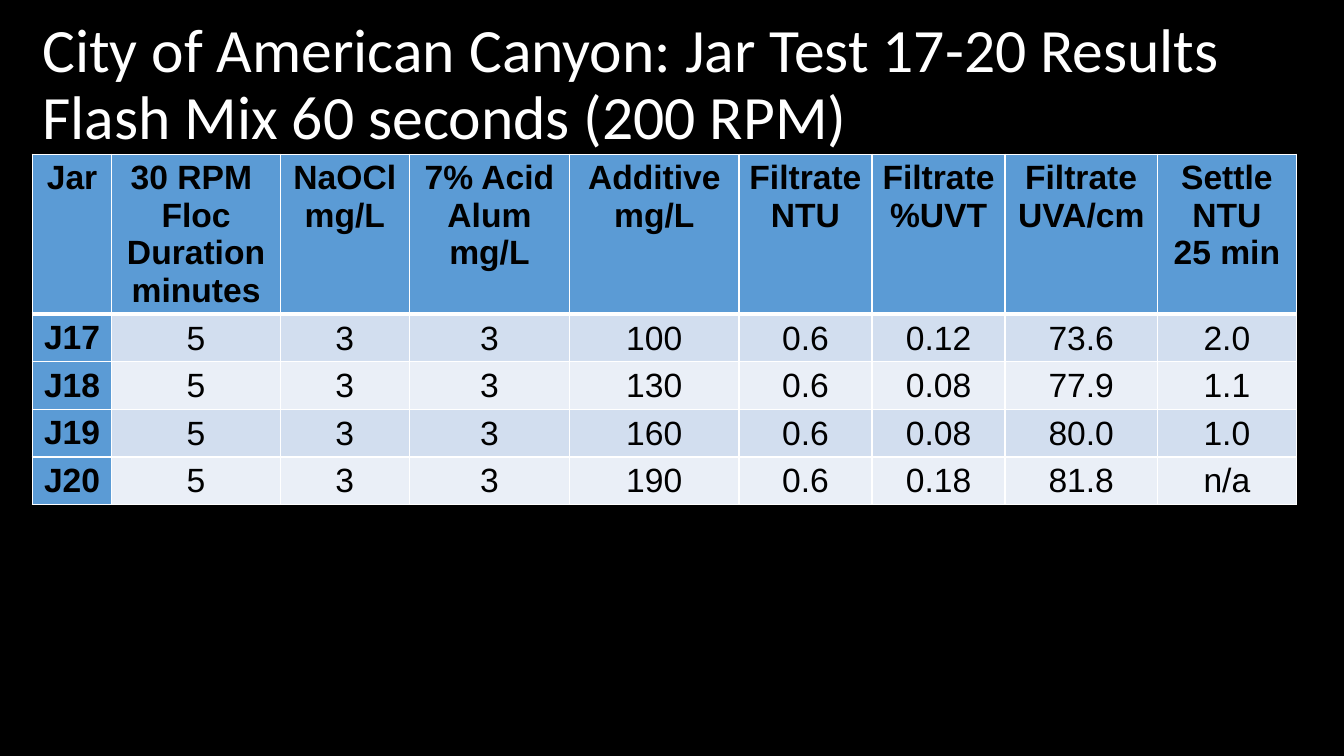
from lxml import etree
from pptx import Presentation
from pptx.dml.color import RGBColor
from pptx.enum.text import MSO_ANCHOR, MSO_AUTO_SIZE, PP_ALIGN
from pptx.oxml.ns import qn
from pptx.util import Inches, Pt

LEFT, CENTER = PP_ALIGN.LEFT, PP_ALIGN.CENTER
TOP, MIDDLE = MSO_ANCHOR.TOP, MSO_ANCHOR.MIDDLE
NO_FIT = MSO_AUTO_SIZE.NONE
COLORS = {"back": "000000", "title": "FFFFFF", "text": "000000", "border": "FFFFFF",
          "head": "5B9BD5", "odd": "D2DEEF", "even": "EAEFF7"}

HEADERS = ["Jar", "30 RPM \nFloc\nDuration\nminutes", "NaOCl\nmg/L", "7% Acid Alum\nmg/L",
           "Additive\nmg/L", "Filtrate\nNTU", "Filtrate\n%UVT", "Filtrate\nUVA/cm",
           "Settle\nNTU\n25 min"]
RESULTS = [
    ["J17", "5", "3", "3", "100", "0.6", "0.12", "73.6", "2.0"],
    ["J18", "5", "3", "3", "130", "0.6", "0.08", "77.9", "1.1"],
    ["J19", "5", "3", "3", "160", "0.6", "0.08", "80.0", "1.0"],
    ["J20", "5", "3", "3", "190", "0.6", "0.18", "81.8", "n/a"],
]
COL_WIDTHS = [0.79, 1.67, 1.28, 1.59, 1.68, 1.32, 1.32, 1.51, 1.38]
ROW_HEIGHT = 0.41
MARGIN = 0.32


def format_runs(p, font, size, color, bold=False):
    for r in p.runs:
        r.font.name, r.font.size, r.font.bold = font, Pt(size), bold
        r.font.color.rgb = RGBColor.from_string(COLORS[color])


def set_borders(cell, bottom_width):
    tcPr = cell._tc.get_or_add_tcPr()
    widths = {"a:lnL": 1, "a:lnR": 1, "a:lnT": 1, "a:lnB": bottom_width}
    for i, (tag, width) in enumerate(widths.items()):
        ln = etree.Element(qn(tag), w=str(Pt(width)))
        fill = etree.SubElement(ln, qn("a:solidFill"))
        etree.SubElement(fill, qn("a:srgbClr"), val=COLORS["border"])
        tcPr.insert(i, ln)


prs = Presentation()
prs.slide_width, prs.slide_height = Inches(13.33), Inches(7.5)
s = prs.slides.add_slide(prs.slide_layouts[5])
s.background.fill.solid()
s.background.fill.fore_color.rgb = RGBColor.from_string(COLORS["back"])

# Title
title = s.shapes.title
title.left, title.top = Inches(MARGIN), Inches(0.13)
title.width, title.height = Inches(12.1), Inches(1.45)
tf = title.text_frame
tf.text = "City of American Canyon: Jar Test 17-20 Results\vFlash Mix 60 seconds (200 RPM)"
tf.word_wrap, tf.auto_size, tf.vertical_anchor = True, NO_FIT, MIDDLE
p = tf.paragraphs[0]
p.alignment, p.line_spacing = LEFT, 0.9
format_runs(p, "Calibri", 44, "title")

# Results table
rows = [HEADERS] + RESULTS
table = s.shapes.add_table(len(rows), len(HEADERS), Inches(MARGIN), Inches(1.53),
                           Inches(sum(COL_WIDTHS)), Inches(ROW_HEIGHT * len(rows))).table
table.first_col = True
for column, width in zip(table.columns, COL_WIDTHS):
    column.width = Inches(width)

for i, values in enumerate(rows):
    table.rows[i].height = Inches(ROW_HEIGHT)
    for j, value in enumerate(values):
        cell = table.cell(i, j)
        is_head = i == 0 or j == 0
        cell.text_frame.text = value
        cell.vertical_anchor = TOP if is_head else MIDDLE
        if not is_head:
            cell.margin_left = cell.margin_right = cell.margin_top = Inches(0.01)
            cell.margin_bottom = 0
        for p in cell.text_frame.paragraphs:
            p.alignment = CENTER
            format_runs(p, "Arial", 24, "text", bold=is_head)
        band = "head" if is_head else "odd" if i % 2 else "even"
        cell.fill.solid()
        cell.fill.fore_color.rgb = RGBColor.from_string(COLORS[band])
        set_borders(cell, 3 if i == 0 else 1)

prs.save("out.pptx")
